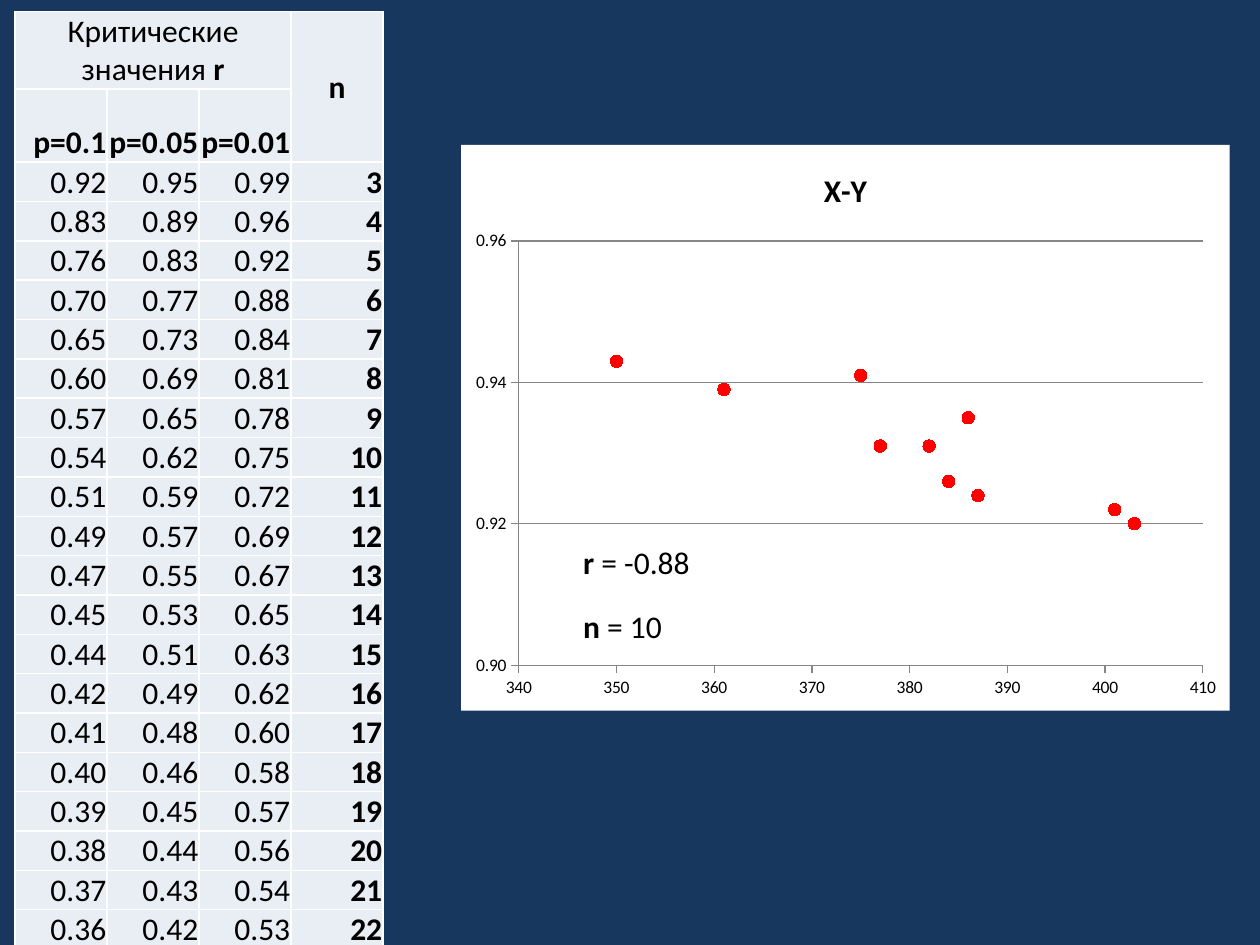
from lxml import etree
from pptx import Presentation, util as u
from pptx.chart.data import XyChartData
from pptx.dml.color import RGBColor
from pptx.enum import chart as ch, text as tx
from pptx.oxml import parse_xml
from pptx.oxml.ns import nsdecls, qn

NAVY = RGBColor(0x17, 0x37, 0x5E)
PALE = RGBColor(0xE9, 0xED, 0xF4)
WHITE = RGBColor(255, 255, 255)
BLACK = RGBColor(0, 0, 0)
RED = RGBColor(255, 0, 0)
GREY = RGBColor(0x86, 0x86, 0x86)
FONT = "Calibri"

# Content
HEAD = ("Критические значения ", "r")
LEVELS = ["p=0.1", "p=0.05", "p=0.01"]
FIRST_N = 3
CRIT = [
    (0.92, 0.95, 0.99), (0.83, 0.89, 0.96), (0.76, 0.83, 0.92),
    (0.70, 0.77, 0.88), (0.65, 0.73, 0.84), (0.60, 0.69, 0.81),
    (0.57, 0.65, 0.78), (0.54, 0.62, 0.75), (0.51, 0.59, 0.72),
    (0.49, 0.57, 0.69), (0.47, 0.55, 0.67), (0.45, 0.53, 0.65),
    (0.44, 0.51, 0.63), (0.42, 0.49, 0.62), (0.41, 0.48, 0.60),
    (0.40, 0.46, 0.58), (0.39, 0.45, 0.57), (0.38, 0.44, 0.56),
    (0.37, 0.43, 0.54), (0.36, 0.42, 0.53),
]
POINTS = [
    (387, 0.924), (375, 0.941), (377, 0.931), (382, 0.931), (350, 0.943),
    (384, 0.926), (401, 0.922), (386, 0.935), (361, 0.939), (403, 0.920),
]
NOTES = [("r ", "= -0.88", 1.06), ("n ", "= 10", 0.83)]

# Grid, in inches
COL, HEAD_H, ROW_H = 0.73, 0.58, 0.31
NOTE_X, NOTE_Y, NOTE_STEP, NOTE_H = 4.53, 4.26, 0.51, 0.4


def style(font, size=18, bold=False):
    font.name, font.size, font.bold = FONT, u.Pt(size), bold
    font.color.rgb = BLACK


def add_run(par, words, bold=False):
    run = par.add_run()
    run.text = words
    style(run.font, bold=bold)


def fill_cell(cell, parts, align, anchor):
    """Write (words, bold) parts, then give the cell its borders and fill."""
    par = cell.text_frame.paragraphs[0]
    par.alignment = align
    for words, bold in parts:
        add_run(par, words, bold)
    paint(cell)
    cell.vertical_anchor = anchor


def paint(cell):
    cell.margin_left = cell.margin_right = cell.margin_top = u.Pt(0.5)
    cell.margin_bottom = 0
    props = cell._tc.get_or_add_tcPr()
    for side in "LRTB":
        props.append(parse_xml(
            f'<a:ln{side} {nsdecls("a")} w="12700"><a:solidFill>'
            f'<a:srgbClr val="{WHITE}"/></a:solidFill></a:ln{side}>'))
    cell.fill.solid()
    cell.fill.fore_color.rgb = PALE


def add_crit(slide):
    rows = len(CRIT) + 2
    frame = slide.shapes.add_table(
        rows, 4, u.Inches(0.12), u.Inches(0.09), u.Inches(4 * COL),
        u.Inches(2 * HEAD_H + len(CRIT) * ROW_H))
    table = frame.table
    table.first_row = table.horz_banding = False
    for col in table.columns:
        col.width = u.Inches(COL)
    for i, row in enumerate(table.rows):
        row.height = u.Inches(HEAD_H if i < 2 else ROW_H)

    # Merged heads
    mid, low = tx.MSO_ANCHOR.MIDDLE, tx.MSO_ANCHOR.BOTTOM
    center, right = tx.PP_ALIGN.CENTER, tx.PP_ALIGN.RIGHT
    table.cell(0, 0).merge(table.cell(0, 2))
    table.cell(0, 3).merge(table.cell(1, 3))
    fill_cell(table.cell(0, 0), zip(HEAD, (False, True)), center, mid)
    fill_cell(table.cell(0, 3), [("n", True)], center, mid)
    for spot in ((0, 1), (0, 2), (1, 3)):
        paint(table.cell(*spot))

    # Levels and values
    for c, level in enumerate(LEVELS):
        fill_cell(table.cell(1, c), [(level, True)], right, low)
    for r, vals in enumerate(CRIT):
        words = [f"{v:.2f}" for v in vals] + [str(FIRST_N + r)]
        for c, word in enumerate(words):
            fill_cell(table.cell(r + 2, c), [(word, c == 3)], right, low)


def set_axis(axis, low, high, step, form):
    axis.minimum_scale, axis.maximum_scale, axis.major_unit = low, high, step
    axis.major_tick_mark = ch.XL_TICK_MARK.OUTSIDE
    axis.minor_tick_mark = ch.XL_TICK_MARK.NONE
    axis.tick_labels.number_format = form
    axis.tick_labels.number_format_is_linked = False
    style(axis.tick_labels.font, 10)
    axis.format.line.color.rgb = GREY


def add_plot(slide):
    data = XyChartData()
    points = data.add_series("Series 1")
    for x, y in POINTS:
        points.add_data_point(x, y)
    chart = slide.shapes.add_chart(
        ch.XL_CHART_TYPE.XY_SCATTER, u.Inches(3.66), u.Inches(1.15),
        u.Inches(6.1), u.Inches(4.49), data).chart
    style(chart.font, 10)
    chart.has_legend = False
    chart.has_title = True
    title = chart.chart_title.text_frame
    title.text = "X-Y"
    style(title.paragraphs[0].runs[0].font, bold=True)

    # Axes
    set_axis(chart.category_axis, 340, 410, 10, "0")
    set_axis(chart.value_axis, 0.9, 0.96, 0.02, "0.00")
    chart.category_axis.has_major_gridlines = False
    chart.value_axis.has_major_gridlines = True
    chart.value_axis.major_gridlines.format.line.color.rgb = GREY

    # Markers only
    chart.plots[0].vary_by_categories = False
    series = chart.plots[0].series[0]
    series.smooth = False
    series.format.line.fill.background()
    mark = series.marker
    mark.style, mark.size = ch.XL_MARKER_STYLE.CIRCLE, 7
    mark.format.fill.solid()
    mark.format.fill.fore_color.rgb = RED
    mark.format.line.color.rgb = RED

    # Plot area and white ground
    area = chart._chartSpace.chart.plotArea
    for old in area.findall(qn("c:layout")):
        area.remove(old)
    layout = etree.Element(qn("c:layout"))
    manual = etree.SubElement(layout, qn("c:manualLayout"))
    for tag, val in (("layoutTarget", "inner"), ("xMode", "edge"),
                     ("yMode", "edge"), ("x", 0.075), ("y", 0.17),
                     ("w", 0.89), ("h", 0.75)):
        etree.SubElement(manual, qn("c:" + tag)).set("val", str(val))
    area.insert(0, layout)
    chart._chartSpace.chart.addnext(parse_xml(
        f'<c:spPr {nsdecls("c", "a")}><a:solidFill><a:srgbClr val="{WHITE}"/>'
        '</a:solidFill><a:ln><a:noFill/></a:ln></c:spPr>'))


def add_notes(slide):
    for i, (name, val, width) in enumerate(NOTES):
        box = slide.shapes.add_textbox(
            u.Inches(NOTE_X), u.Inches(NOTE_Y + i * NOTE_STEP),
            u.Inches(width), u.Inches(NOTE_H))
        frame = box.text_frame
        frame.word_wrap = False
        frame.auto_size = tx.MSO_AUTO_SIZE.SHAPE_TO_FIT_TEXT
        add_run(frame.paragraphs[0], name, True)
        add_run(frame.paragraphs[0], val)


def main():
    prs = Presentation()
    prs.slide_width, prs.slide_height = u.Inches(10), u.Inches(7.5)
    slide = prs.slides.add_slide(prs.slide_layouts[6])
    slide.background.fill.solid()
    slide.background.fill.fore_color.rgb = NAVY
    add_plot(slide)
    add_crit(slide)
    add_notes(slide)
    prs.save("out.pptx")


if __name__ == "__main__":
    main()
